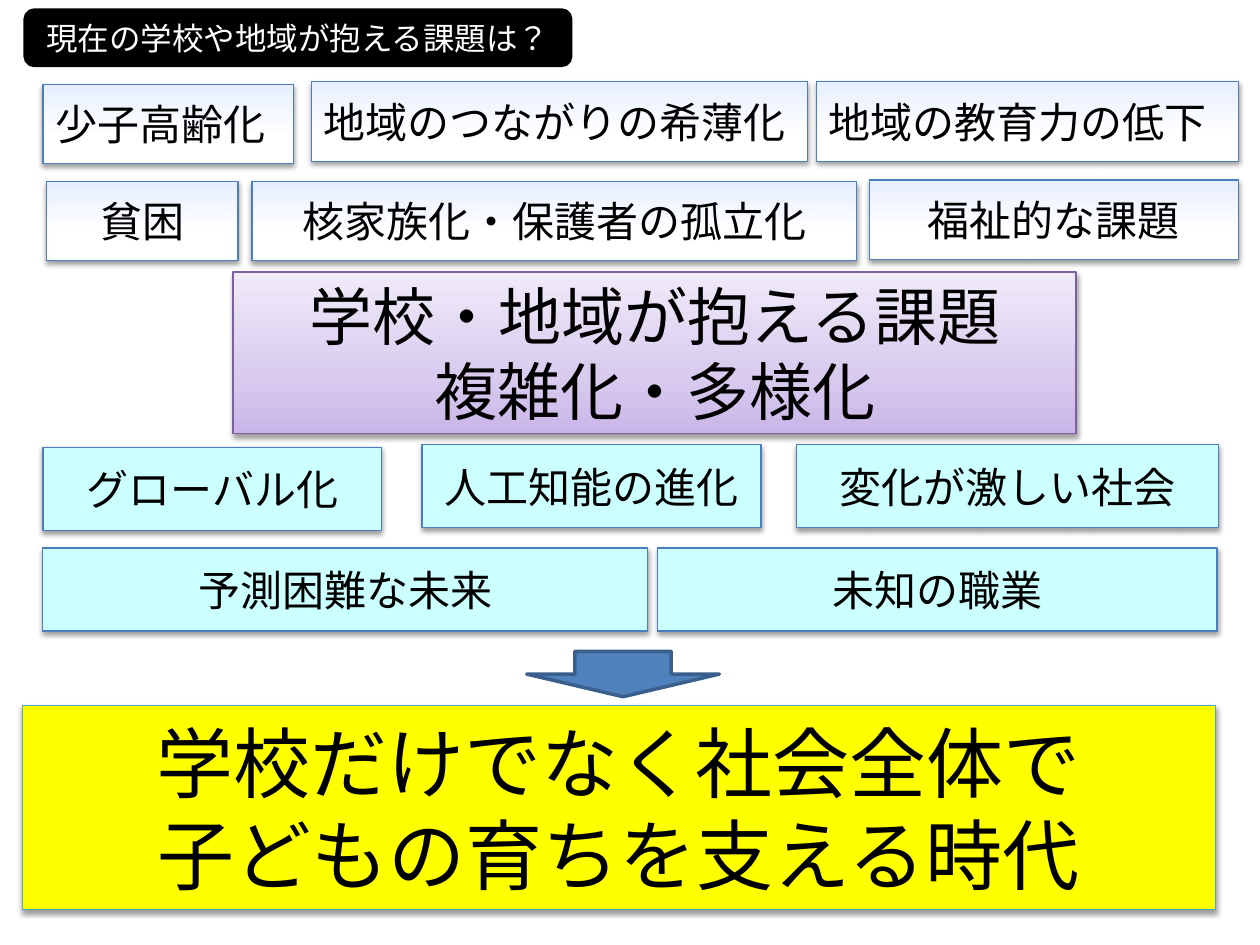
import copy

import pptx
import pptx.dml.color
import pptx.enum.dml
import pptx.enum.lang
import pptx.enum.shapes
import pptx.enum.text
import pptx.oxml
import pptx.oxml.ns
import pptx.util

Inches, Pt = pptx.util.Inches, pptx.util.Pt
Kind = pptx.enum.shapes.MSO_SHAPE
Align = pptx.enum.text.PP_ALIGN
qn = pptx.oxml.ns.qn

FACE = "Noto Sans CJK JP"
BLUE = "4B7EBC"
PALE = [(0, "FFFFFF"), (0.35, "FFFFFF"), (1, "E6EEFF")]
LILAC = [(0, "C9B5E8"), (0.35, "D8CBEE"), (1, "F0EAF9")]
AQUA = "CCFFFF"
SHADE = (
    '<a:outerShdw xmlns:a="http://schemas.openxmlformats.org/drawingml/2006/main"'
    ' blurRad="39370" dist="20320" dir="5400000" rotWithShape="0">'
    '<a:srgbClr val="000000"><a:alpha val="38000"/></a:srgbClr></a:outerShdw>'
)


def paint(color, code):
    color.rgb = pptx.dml.color.RGBColor.from_string(code)


class Board:
    def __init__(self, slide):
        self.slide = slide
        self.frame = {"word_wrap": True,
                      "vertical_anchor": pptx.enum.text.MSO_ANCHOR.MIDDLE}
        self.font = {"name": FACE,
                     "language_id": pptx.enum.lang.MSO_LANGUAGE_ID.JAPANESE}

    def form(self, kind, at, fill, edge, width):
        shape = self.slide.shapes.add_shape(kind, *map(Inches, at))
        shape.shadow.inherit = False
        if isinstance(fill, str):
            shape.fill.solid()
            paint(shape.fill.fore_color, fill)
        else:
            self.blend(shape, fill)
        paint(shape.line.color, edge)
        shape.line.width = Pt(width)
        return shape

    def blend(self, shape, stops):
        shape.fill.gradient()
        shape.fill.gradient_angle = 90
        group = shape._element.spPr.find(".//" + qn("a:gsLst"))
        while len(group) < len(stops):
            group.append(copy.deepcopy(group[-1]))
        for stop, (place, code) in zip(shape.fill.gradient_stops, stops):
            stop.position = place
            paint(stop.color, code)

    def label(self, shape, lines, size, align=Align.CENTER, code="000000", face=FACE):
        frame = shape.text_frame
        for key, value in self.frame.items():
            setattr(frame, key, value)
        frame.text = "\n".join(lines)
        style = {**self.font, "name": face, "size": Pt(size)}
        for para in frame.paragraphs:
            para.alignment = align
            for run in para.runs:
                for key, value in style.items():
                    setattr(run.font, key, value)
                paint(run.font.color, code)
                # East Asian typeface for the Japanese text
                east = pptx.oxml.parse_xml(
                    '<a:ea xmlns:a="http://schemas.openxmlformats.org/drawingml/'
                    f'2006/main" typeface="{FACE}"/>')
                run.font._element.find(qn("a:latin")).addnext(east)

    def card(self, at, lines, fill, edge=BLUE, size=24, align=Align.CENTER):
        shape = self.form(Kind.RECTANGLE, at, fill, edge, 0.75)
        effects = shape._element.spPr.find(qn("a:effectLst"))
        effects.append(pptx.oxml.parse_xml(SHADE))
        self.label(shape, lines, size, align)

    def title(self, at, text):
        shape = self.form(Kind.ROUNDED_RECTANGLE, at, "000000", "000000", 2)
        self.label(shape, [text], 18, code="FFFFFF", face="Calibri")

    def arrow(self, at):
        self.form(Kind.DOWN_ARROW, at, "4F81BD", "3A5F8C", 2)


def main():
    deck = pptx.Presentation()
    deck.slide_width, deck.slide_height = Inches(10), Inches(7.5)
    board = Board(deck.slides.add_slide(deck.slide_layouts[6]))

    # Conclusion and the arrow to it
    board.card((0.18, 5.6, 9.47, 1.62),
               ["学校だけでなく社会全体で", "子どもの育ちを支える時代"],
               "FFFF00", "46AAC5", 44)
    board.arrow((4.18, 5.17, 1.53, 0.36))

    # Heading
    board.title((0.2, 0.08, 4.33, 0.44), "現在の学校や地域が抱える課題は？")

    # Central issue
    board.card((1.85, 2.16, 6.69, 1.28),
               ["学校・地域が抱える課題", "複雑化・多様化"],
               LILAC, "7D60A0", 36)

    # Issue cards: left, top, width, text
    groups = [
        (PALE, 0.63, Align.LEFT, [
            (0.34, 0.67, 1.99, "少子高齢化"),
            (2.47, 0.65, 3.94, "地域のつながりの希薄化"),
            (6.48, 0.65, 3.35, "地域の教育力の低下")]),
        (PALE, 0.63, Align.CENTER, [
            (0.37, 1.44, 1.52, "貧困"),
            (6.9, 1.43, 2.93, "福祉的な課題"),
            (2, 1.44, 4.8, "核家族化・保護者の孤立化")]),
        (AQUA, 0.66, Align.CENTER, [
            (0.34, 3.55, 2.69, "グローバル化"),
            (3.35, 3.53, 2.69, "人工知能の進化"),
            (6.32, 3.53, 3.35, "変化が激しい社会"),
            (0.34, 4.35, 4.8, "予測困難な未来"),
            (5.22, 4.35, 4.44, "未知の職業")]),
    ]
    for fill, height, align, cards in groups:
        for left, top, width, text in cards:
            board.card((left, top, width, height), [text], fill, align=align)

    deck.save("out.pptx")


if __name__ == "__main__":
    main()
